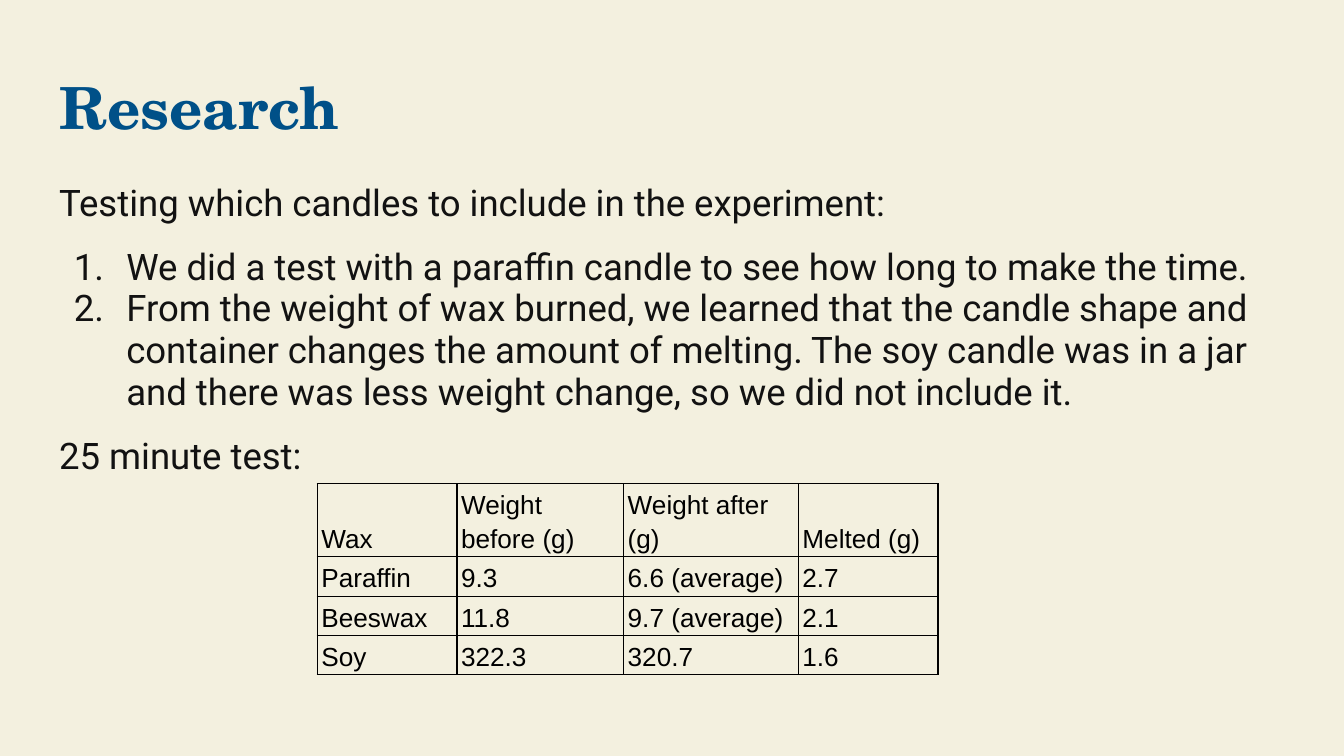
from dataclasses import dataclass

from lxml import etree
from pptx import Presentation
from pptx.dml.color import RGBColor
from pptx.enum.text import MSO_ANCHOR, MSO_AUTO_SIZE, PP_ALIGN
from pptx.oxml.ns import qn
from pptx.util import Inches, Pt

TOP, BOTTOM = MSO_ANCHOR.TOP, MSO_ANCHOR.BOTTOM
LEFT = PP_ALIGN.LEFT
NO_FIT = MSO_AUTO_SIZE.NONE

CREAM = RGBColor(0xF3, 0xF0, 0xDF)
BLUE = RGBColor(0x00, 0x50, 0x88)
INK = RGBColor(0x12, 0x12, 0x12)
BLACK = RGBColor(0x00, 0x00, 0x00)

TITLE_FONT = {"name": "TeX Gyre Schola", "size": Pt(31.1), "bold": True}
BODY_FONT = {"name": "Roboto", "size": Pt(19.6)}
CELL_FONT = {"name": "Arial", "size": Pt(14), "bold": False}


@dataclass
class Line:
    text: str
    numbered: bool = False
    before: float = 0
    after: float = 0


BODY = [
    Line("Testing which candles to include in the experiment:"),
    Line("We did a test with a paraffin candle to see how long to make the time.",
         numbered=True, before=12),
    Line("From the weight of wax burned, we learned that the candle shape and "
         "container changes the amount of melting. The soy candle was in a jar "
         "and there was less weight change, so we did not include it.",
         numbered=True),
    Line("25 minute test:", before=12, after=12),
]

COL_WIDTHS = [1.04, 1.24, 1.3, 1.04]
ROW_HEIGHT = 0.23
WEIGHTS = [
    ["Wax", "Weight before (g)", "Weight after (g)", "Melted (g)"],
    ["Paraffin", "9.3", "6.6 (average)", "2.7"],
    ["Beeswax", "11.8", "9.7 (average)", "2.1"],
    ["Soy", "322.3", "320.7", "1.6"],
]


def write(p, text: str, font: dict, color: RGBColor, spacing: float,
          before: float = 0, after: float = 0) -> None:
    p.alignment = LEFT
    p.line_spacing = spacing
    p.space_before, p.space_after = Pt(before), Pt(after)
    r = p.add_run()
    r.text = text
    for name, value in font.items():
        setattr(r.font, name, value)
    r.font.color.rgb = color


def set_bullet(p, numbered: bool) -> None:
    pPr = p._p.get_or_add_pPr()
    pPr.set("marL", str(Inches(0.5 if numbered else 0)))
    pPr.set("indent", str(Inches(-0.39 if numbered else 0)))
    if not numbered:
        etree.SubElement(pPr, qn("a:buNone"))
        return
    color = etree.SubElement(pPr, qn("a:buClr"))
    etree.SubElement(color, qn("a:srgbClr"), val=str(INK))
    etree.SubElement(pPr, qn("a:buFont"), typeface=BODY_FONT["name"])
    etree.SubElement(pPr, qn("a:buAutoNum"), type="arabicPeriod")


def place(sp, top: float, height: float):
    sp.left, sp.top = Inches(0.34), Inches(top)
    sp.width, sp.height = Inches(9.32), Inches(height)
    tf = sp.text_frame
    tf.word_wrap, tf.auto_size, tf.vertical_anchor = True, NO_FIT, TOP
    for side in ("left", "top", "right", "bottom"):
        setattr(tf, f"margin_{side}", Inches(0.1))
    return tf


def set_borders(cell) -> None:
    tcPr = cell._tc.get_or_add_tcPr()
    for i, side in enumerate(("lnL", "lnR", "lnT", "lnB")):
        ln = etree.Element(qn(f"a:{side}"), w=str(Pt(0.75)))
        fill = etree.SubElement(ln, qn("a:solidFill"))
        etree.SubElement(fill, qn("a:srgbClr"), val=str(BLACK))
        tcPr.insert(i, ln)


def draw_table(s, rows: list[list[str]], left: float, top: float) -> None:
    table = s.shapes.add_table(
        len(rows), len(COL_WIDTHS), Inches(left), Inches(top),
        Inches(sum(COL_WIDTHS)), Inches(ROW_HEIGHT * len(rows))).table
    table.first_row = table.horz_banding = False
    for column, width in zip(table.columns, COL_WIDTHS):
        column.width = Inches(width)
    for i, values in enumerate(rows):
        for j, value in enumerate(values):
            cell = table.cell(i, j)
            cell.fill.background()
            cell.vertical_anchor = BOTTOM
            cell.margin_left = cell.margin_right = Pt(2.25)
            cell.margin_top = cell.margin_bottom = Pt(1.5)
            write(cell.text_frame.paragraphs[0], value, CELL_FONT, BLACK, 1.15)
            set_borders(cell)


def main() -> None:
    prs = Presentation()
    # Widescreen, 16:9
    prs.slide_width = Inches(10)
    prs.slide_height = prs.slide_width * 9 // 16
    s = prs.slides.add_slide(prs.slide_layouts[1])
    s.background.fill.solid()
    s.background.fill.fore_color.rgb = CREAM

    # Title
    tf = place(s.shapes.title, 0.49, 0.63)
    write(tf.paragraphs[0], "Research", TITLE_FONT, BLUE, 0.9)

    # Findings
    tf = place(s.placeholders[1], 1.26, 2.79)
    for i, line in enumerate(BODY):
        p = tf.add_paragraph() if i else tf.paragraphs[0]
        write(p, line.text, BODY_FONT, INK, 0.95, line.before, line.after)
        set_bullet(p, line.numbered)

    # Wax weights
    draw_table(s, WEIGHTS, 2.36, 3.6)
    prs.save("out.pptx")


if __name__ == "__main__":
    main()
